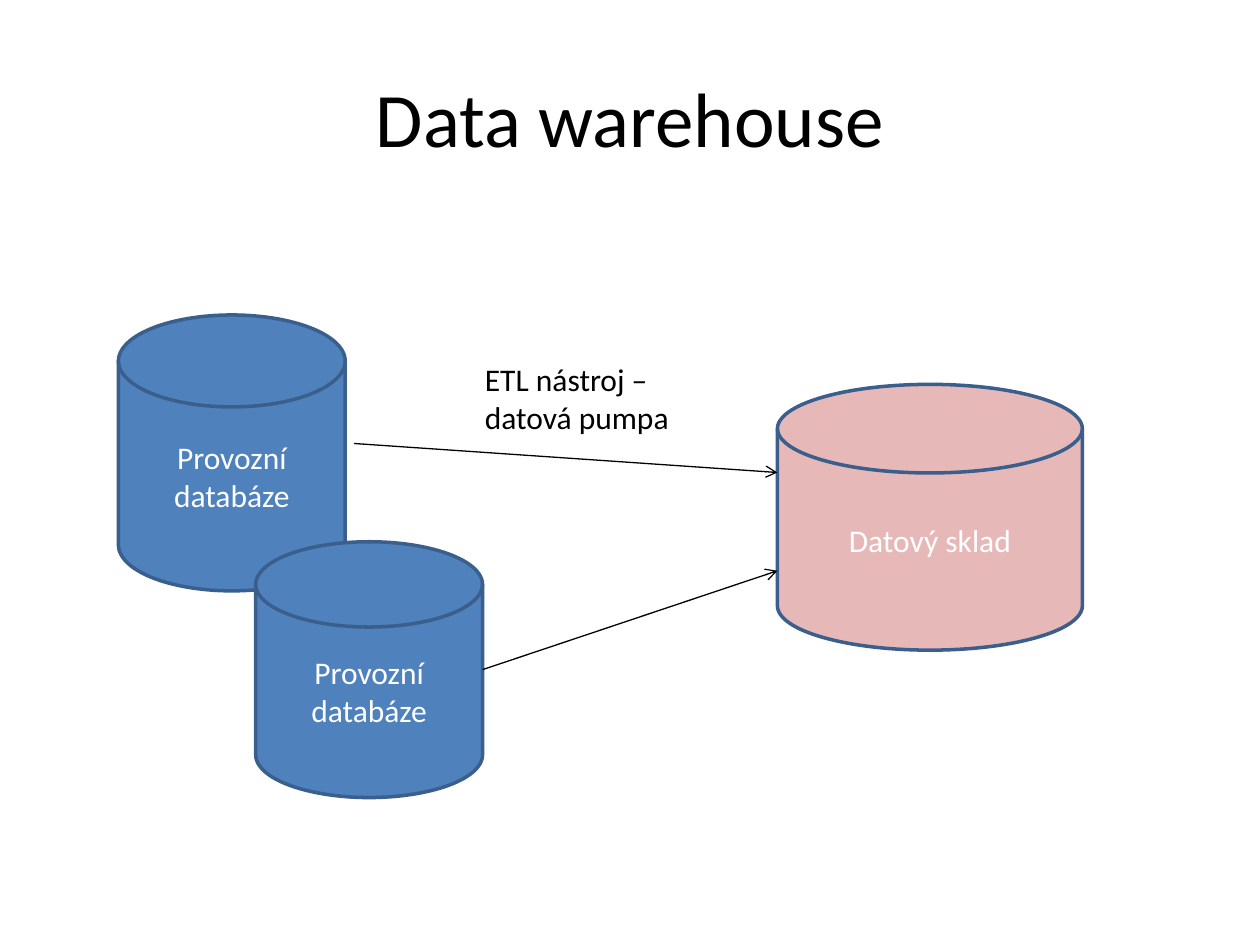
from typing import NamedTuple

from lxml.etree import SubElement
from pptx import Presentation
from pptx.dml.color import RGBColor
from pptx.enum.shapes import MSO_CONNECTOR as Connector, MSO_SHAPE as Shape
from pptx.enum.text import MSO_ANCHOR as Anchor, MSO_AUTO_SIZE as AutoSize, PP_ALIGN as Align
from pptx.oxml.ns import qn
from pptx.util import Inches, Pt

WIDTH, HEIGHT = Inches(10), Inches(7.5)
BLACK, WHITE = "000000", "FFFFFF"
BLUE, DARK_BLUE, PINK = "4F81BD", "3A5F8C", "E6B9B8"
FONT = "Calibri"


class Box(NamedTuple):
    """Position and size in percent of the slide's width and height."""
    left: float
    top: float
    width: float
    height: float

    @property
    def right_middle(self) -> tuple[float, float]:
        return self.left + self.width, self.top + self.height / 2


class Store(NamedTuple):
    box: Box
    lines: list[str]
    fill: str


class Flow(NamedTuple):
    start: tuple[float, float]
    end: tuple[float, float]


SOURCE_LINES = ["Provozní", "databáze"]
FIRST_SOURCE = Store(Box(9.4, 33.33, 18, 29.2), SOURCE_LINES, BLUE)
SECOND_SOURCE = Store(Box(20.3, 57.33, 18, 27.07), SOURCE_LINES, BLUE)
WAREHOUSE = Store(Box(61.7, 40.67, 24.2, 28.13), ["Datový sklad"], PINK)
FLOWS = [
    Flow((28.1, 46.93), (WAREHOUSE.box.left, 50)),
    Flow(SECOND_SOURCE.box.right_middle, (WAREHOUSE.box.left, 60.4)),
]
TITLE_BOX = Box(5, 4, 90, 16.67)
ETL_BOX = Box(37.5, 37.47, 18, 9.47)


def color(value: str) -> RGBColor:
    return RGBColor.from_string(value)


def place(x: float, y: float) -> tuple[int, int]:
    """Turn percent of the slide into slide lengths."""
    return round(WIDTH * x / 100), round(HEIGHT * y / 100)


def frame(box: Box) -> tuple[int, int, int, int]:
    return *place(box.left, box.top), *place(box.width, box.height)


def write(text_frame, lines: list[str], size: float, text_color: str,
          align: Align, **frame_format) -> None:
    for name, value in frame_format.items():
        setattr(text_frame, name, value)
    text_frame.text = "\n".join(lines)
    for paragraph in text_frame.paragraphs:
        paragraph.alignment = align
        font = paragraph.runs[0].font
        for name, value in {"name": FONT, "size": Pt(size)}.items():
            setattr(font, name, value)
        font.color.rgb = color(text_color)


def draw_line(line, line_color: str, width: float) -> None:
    line.color.rgb = color(line_color)
    line.width = Pt(width)


def add_store(slide, store: Store) -> None:
    disk = slide.shapes.add_shape(Shape.FLOWCHART_MAGNETIC_DISK, *frame(store.box))
    disk.shadow.inherit = False
    disk.fill.solid()
    disk.fill.fore_color.rgb = color(store.fill)
    draw_line(disk.line, DARK_BLUE, 2)
    write(disk.text_frame, store.lines, 18, WHITE, Align.CENTER,
          vertical_anchor=Anchor.MIDDLE, word_wrap=True)


def add_flow(slide, flow: Flow) -> None:
    arrow = slide.shapes.add_connector(
        Connector.STRAIGHT, *place(*flow.start), *place(*flow.end))
    draw_line(arrow.line, BLACK, 0.75)
    properties = arrow.element.spPr
    SubElement(properties.find(qn("a:ln")), qn("a:tailEnd"), type="arrow")
    SubElement(properties, qn("a:effectLst"))


def main() -> None:
    deck = Presentation()
    deck.slide_width, deck.slide_height = WIDTH, HEIGHT
    slide = deck.slides.add_slide(deck.slide_layouts[5])

    title = slide.shapes.title
    title.left, title.top, title.width, title.height = frame(TITLE_BOX)
    write(title.text_frame, ["Data warehouse"], 44, BLACK, Align.CENTER,
          vertical_anchor=Anchor.MIDDLE)

    for store in (FIRST_SOURCE, SECOND_SOURCE, WAREHOUSE):
        add_store(slide, store)
    for flow in FLOWS:
        add_flow(slide, flow)

    etl_label = slide.shapes.add_textbox(*frame(ETL_BOX))
    write(etl_label.text_frame, ["ETL nástroj –", "datová pumpa"], 18, BLACK,
          Align.LEFT, word_wrap=False, auto_size=AutoSize.SHAPE_TO_FIT_TEXT)

    deck.save("out.pptx")


if __name__ == "__main__":
    main()
